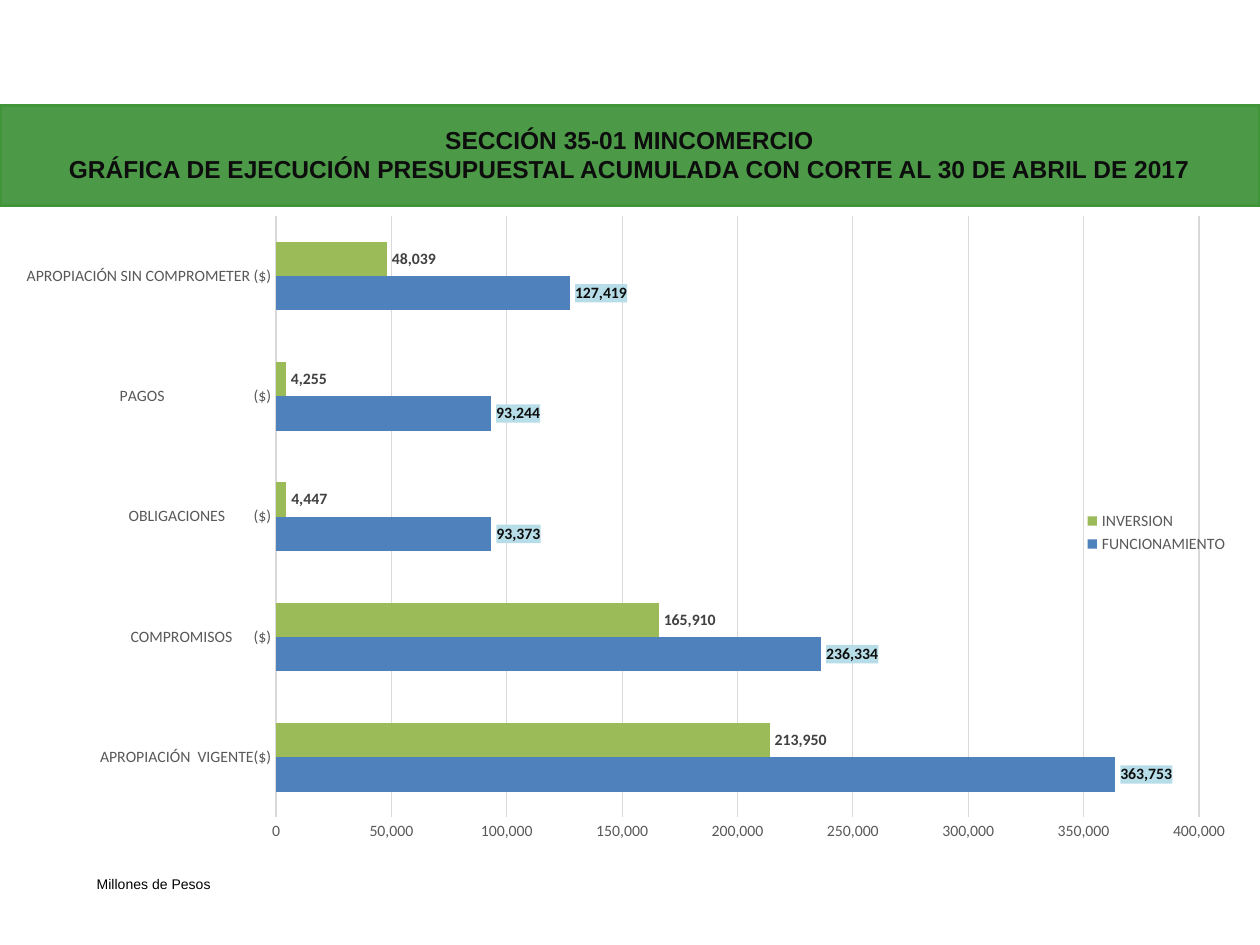
from lxml import etree
from pptx import Presentation
from pptx.chart.data import CategoryChartData
from pptx.dml.color import RGBColor
from pptx.enum.chart import XL_CHART_TYPE, XL_LABEL_POSITION, XL_LEGEND_POSITION, XL_TICK_MARK
from pptx.enum.shapes import MSO_SHAPE
from pptx.enum.text import PP_ALIGN
from pptx.oxml import parse_xml
from pptx.oxml.ns import nsdecls, qn
from pptx.util import Cm, Pt

BARS = XL_CHART_TYPE.BAR_CLUSTERED
OUT = XL_LABEL_POSITION.OUTSIDE_END
RIGHT = XL_LEGEND_POSITION.RIGHT
NO_TICK = XL_TICK_MARK.NONE
RECT = MSO_SHAPE.RECTANGLE
LEFT, CENTER = PP_ALIGN.LEFT, PP_ALIGN.CENTER

COLORS = {
    "band": "4C9A47", "edge": "409539", "title": "0D0D0D", "black": "000000",
    "axis": "595959", "grid": "D9D9D9", "blue": "4F81BD", "green": "9BBB59",
    "dark": "404040", "pale": "B7DEE8",
}
TITLE = [
    "SECCIÓN 35-01 MINCOMERCIO",
    "GRÁFICA DE EJECUCIÓN PRESUPUESTAL ACUMULADA CON CORTE AL 30 DE ABRIL DE 2017",
]
CATS = [
    "APROPIACIÓN  VIGENTE($)",
    "COMPROMISOS      ($)",
    "OBLIGACIONES        ($)",
    "PAGOS                         ($)",
    "APROPIACIÓN SIN COMPROMETER ($)",
]
SERIES = [
    ("FUNCIONAMIENTO", [363753, 236334, 93373, 93244, 127419], "blue", "title", "pale"),
    ("INVERSION", [213950, 165910, 4447, 4255, 48039], "green", "dark", None),
]


def rgb(name):
    """Return the named colour."""
    return RGBColor.from_string(COLORS[name])


def style(font, size, color, bold=False, face="Calibri"):
    """Set size, colour, weight and face of a font."""
    font.size, font.bold, font.name = Pt(size), bold, face
    font.color.rgb = rgb(color)


def add_text(slide, box, lines, size=8, color="black", bold=False, align=LEFT, wrap=True):
    """Add a text box with one paragraph for each line."""
    frame = slide.shapes.add_textbox(*map(Cm, box)).text_frame
    frame.word_wrap = wrap
    frame.text = "\n".join(lines)
    for para in frame.paragraphs:
        para.alignment = align
        for run in para.runs:
            style(run.font, size, color, bold, "Arial")


def add_band(slide, box):
    """Draw the green band and its title."""
    x, y, w, h = box
    band = slide.shapes.add_shape(RECT, *map(Cm, box))
    band.shadow.inherit = False
    band.fill.solid()
    band.fill.fore_color.rgb = rgb("band")
    band.line.color.rgb = rgb("edge")
    band.line.width = Pt(2)
    area = (x + 0.48, y + 0.26, w - 0.98, h - 0.05)
    add_text(slide, area, TITLE, 14, "title", True, CENTER)


def set_layout(node, index, x, y, w, h, inner=False):
    """Give a chart part a fixed place as shares of the chart."""
    for old in node.findall(qn("c:layout")):
        node.remove(old)
    layout = etree.Element(qn("c:layout"))
    manual = etree.SubElement(layout, qn("c:manualLayout"))
    pairs = [("layoutTarget", "inner")] if inner else []
    pairs += [("xMode", "edge"), ("yMode", "edge"), ("x", x), ("y", y), ("w", w), ("h", h)]
    for tag, val in pairs:
        etree.SubElement(manual, qn("c:" + tag)).set("val", str(val))
    node.insert(index, layout)


def set_axis(axis):
    """Strip an axis to its labels."""
    axis.major_tick_mark = axis.minor_tick_mark = NO_TICK
    axis.format.line.fill.background()
    style(axis.tick_labels.font, 9, "axis")


def set_labels(series, color, back):
    """Show bold values at the bar ends, on a tint if one is given."""
    labels = series.data_labels
    labels.show_value = True
    labels.number_format = "#,##0"
    labels.number_format_is_linked = False
    labels.position = OUT
    style(labels.font, 9, color, True)
    if back:
        fill = parse_xml(
            f'<c:spPr {nsdecls("c", "a")}><a:solidFill>'
            f'<a:srgbClr val="{COLORS[back]}"/></a:solidFill></c:spPr>'
        )
        node = series._element.find(qn("c:dLbls"))
        node.find(qn("c:txPr")).addprevious(fill)


def add_bars(slide, box):
    """Add the budget bar chart."""
    data = CategoryChartData(number_format="#,##0")
    data.categories = CATS
    for name, vals, *_ in SERIES:
        data.add_series(name, vals)
    chart = slide.shapes.add_chart(BARS, *map(Cm, box), data).chart
    chart.has_title = False
    style(chart.font, 10, "black")
    plot = chart.plots[0]
    plot.gap_width, plot.overlap, plot.vary_by_categories = 150, 0, False
    for series, (_, _, color, ink, back) in zip(plot.series, SERIES):
        series.format.fill.solid()
        series.format.fill.fore_color.rgb = rgb(color)
        set_labels(series, ink, back)
    set_axis(chart.category_axis)
    axis = chart.value_axis
    set_axis(axis)
    axis.minimum_scale, axis.maximum_scale, axis.major_unit = 0, 400000, 50000
    axis.tick_labels.number_format = "#,##0"
    axis.tick_labels.number_format_is_linked = False
    grid = axis.major_gridlines.format.line
    grid.color.rgb, grid.width = rgb("grid"), Pt(0.75)
    chart.has_legend = True
    legend = chart.legend
    legend.position, legend.include_in_layout = RIGHT, False
    style(legend.font, 9, "axis")
    set_layout(legend._element, 1, 0.87, 0.46, 0.13, 0.08)
    area = chart._chartSpace.chart.plotArea
    set_layout(area, 0, 0.214, 0, 0.756, 0.95, inner=True)


def main():
    """Build and save the slide."""
    deck = Presentation()
    deck.slide_width, deck.slide_height = Cm(25.4), Cm(19.05)
    slide = deck.slides.add_slide(deck.slide_layouts[6])
    add_band(slide, (0, 2.13, 25.4, 2.01))
    add_bars(slide, (0.3, 4.34, 24.61, 12.78))
    add_text(slide, (1.7, 17.53, 3.2, 0.6), ["Millones de Pesos"], wrap=False)
    deck.save("out.pptx")


if __name__ == "__main__":
    main()
